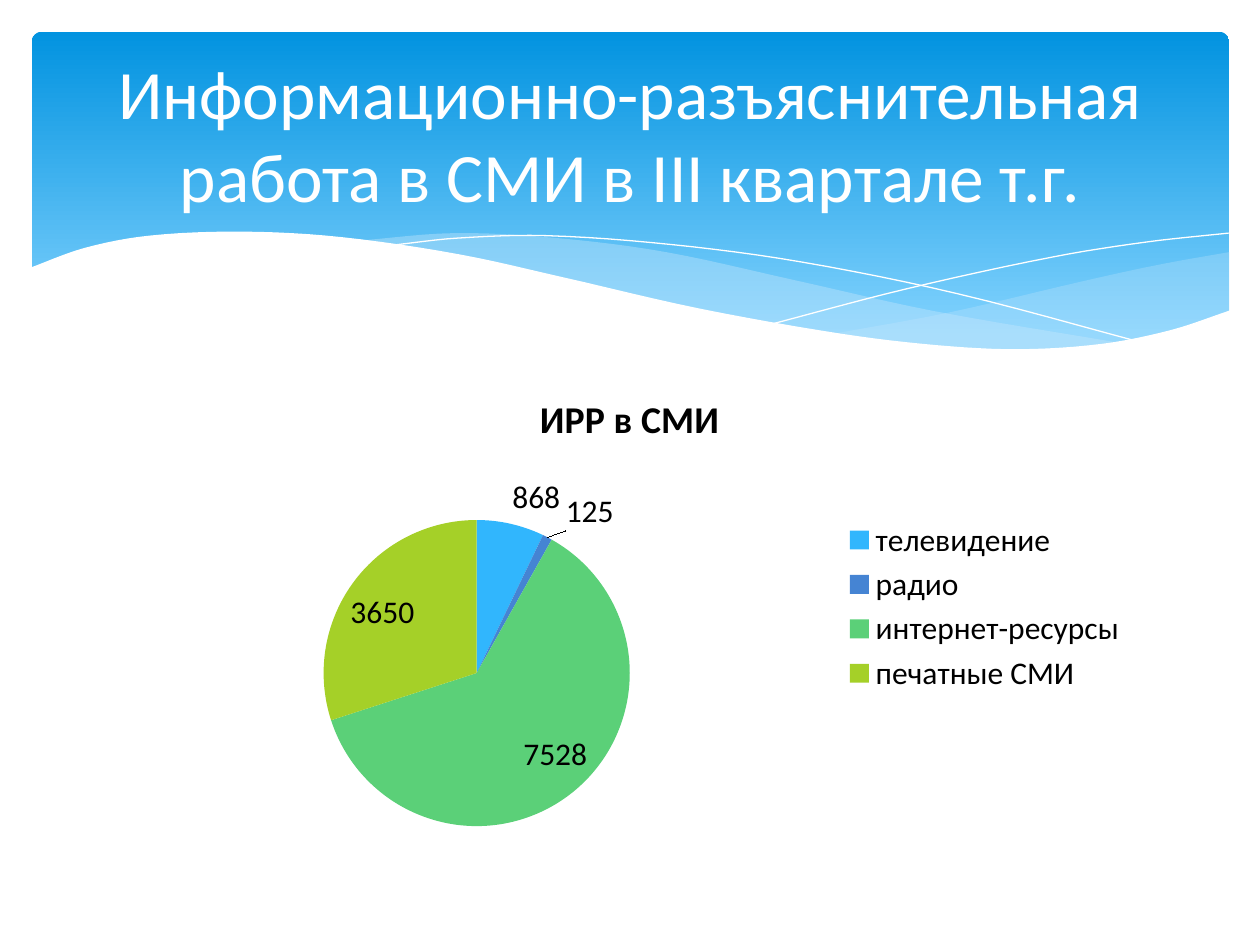
import dataclasses
import itertools

import lxml.etree
import pptx
import pptx.chart.data
import pptx.dml.color
import pptx.enum.chart
import pptx.enum.shapes
import pptx.enum.text
import pptx.oxml
import pptx.oxml.ns
import pptx.util

Cm = pptx.util.Cm
Pt = pptx.util.Pt
qn = pptx.oxml.ns.qn


@dataclasses.dataclass(frozen=True)
class Theme:
    font: str = "Calibri"
    white: str = "FFFFFF"
    black: str = "000000"
    sky_top: str = "0293E0"
    sky_bottom: str = "83D3FE"
    wave: str = "C6E7FC"
    slices: tuple = ("31B6FD", "4584D3", "5BD078", "A5D028")
    title_size: float = 39.6
    chart_title_size: float = 21.6
    chart_size: float = 18


THEME = Theme()

RIGHT_WAVE_TOP = [(16.79, 6.73), (19.13, 6.3), (21.87, 5.66), (23.39, 5.33), (24.79, 5.08)]
RIGHT_WAVE_BOTTOM = [(24.79, 6.27), (23.75, 6.65), (22.58, 6.91), (20.68, 7.06),
                     (18.92, 6.99), (16.79, 6.73)]
LEFT_WAVE_TOP = [(7.26, 4.85), (9.17, 4.7), (11.23, 4.8), (13.41, 5.08),
                 (15.98, 5.64), (18.82, 6.27), (22.68, 6.93)]
LEFT_WAVE_BOTTOM = [(22.68, 6.93), (20.5, 7.06), (18.69, 6.99), (16.51, 6.71),
                    (14.38, 6.3), (11.4, 5.64), (9.19, 5.16), (7.26, 4.85)]
FALLING_LINE = [(7.85, 4.95), (9.22, 4.8), (11, 4.75), (13.54, 4.93),
                (16.15, 5.28), (19.3, 5.92), (23.04, 6.91)]
RISING_LINE = [(15.57, 6.53), (18.29, 5.82), (21.23, 5.18), (23.11, 4.88), (24.77, 4.7)]
WHITE_EDGE = [(0.58, 5.41), (1.7, 5), (3.02, 4.75), (4.9, 4.67), (6.88, 4.78),
              (9.27, 5.13), (11.35, 5.59), (14.1, 6.22), (16.97, 6.73), (18.9, 6.96),
              (20.55, 7.04), (22.23, 6.93), (23.62, 6.65), (24.82, 6.25)]
WHITE_CORNERS = [(24.82, 8.36), (0.58, 8.36)]


def color(code):
    return pptx.dml.color.RGBColor.from_string(code)


def smooth_curve(anchors, steps=6):
    slopes = []
    for index in range(len(anchors)):
        before = anchors[max(index - 1, 0)]
        after = anchors[min(index + 1, len(anchors) - 1)]
        slopes.append((after[1] - before[1]) / (after[0] - before[0]))
    points = [anchors[0]]
    ends = zip(itertools.pairwise(anchors), itertools.pairwise(slopes))
    for ((x0, y0), (x1, y1)), (slope0, slope1) in ends:
        width = x1 - x0
        for step in range(1, steps + 1):
            t = step / steps
            y = (y0 * (1 + 2 * t) * (1 - t) ** 2 + y1 * t * t * (3 - 2 * t)
                 + width * (slope0 * t * (1 - t) ** 2 - slope1 * t * t * (1 - t)))
            points.append((x0 + width * t, y))
    return points


def draw_outline(page, points, closed):
    places = [(Cm(x), Cm(y)) for x, y in points]
    builder = page.shapes.build_freeform(*places[0])
    builder.add_line_segments(places[1:], close=closed)
    shape = builder.convert_to_shape()
    shape.shadow.inherit = False
    return shape


def add_wave(page, points, code, opacity=100):
    shape = draw_outline(page, points, True)
    shape.fill.solid()
    shape.fill.fore_color.rgb = color(code)
    shape.line.fill.background()
    if opacity < 100:
        fill_color = shape.fill._xPr.find(qn("a:solidFill"))[0]
        lxml.etree.SubElement(fill_color, qn("a:alpha")).set("val", str(opacity * 1000))


def add_wave_line(page, anchors):
    shape = draw_outline(page, smooth_curve(anchors), False)
    shape.fill.background()
    shape.line.color.rgb = color(THEME.white)
    shape.line.width = Pt(0)


def add_sky(page):
    sky = page.shapes.add_shape(pptx.enum.shapes.MSO_SHAPE.ROUNDED_RECTANGLE,
                                Cm(0.64), Cm(0.64), Cm(24.14), Cm(6.86))
    sky.adjustments[0] = 0.03
    sky.shadow.inherit = False
    sky.line.fill.background()
    sky.fill.gradient()
    sky.fill.gradient_angle = 270
    stops = zip(sky.fill.gradient_stops, (THEME.sky_top, THEME.sky_bottom), (0, 0.9))
    for stop, code, position in stops:
        stop.color.rgb = color(code)
        stop.position = position


def format_font(font, size, code, bold=False):
    font.name = THEME.font
    font.size = Pt(size)
    font.bold = bold
    font.color.rgb = color(code)


def place_plot(chart, **fractions):
    plot_area = chart._chartSpace.chart.plotArea
    for old in plot_area.findall(qn("c:layout")):
        plot_area.remove(old)
    layout = lxml.etree.Element(qn("c:layout"))
    manual = lxml.etree.SubElement(layout, qn("c:manualLayout"))
    settings = {"layoutTarget": "inner", "xMode": "edge", "yMode": "edge", **fractions}
    for name, value in settings.items():
        lxml.etree.SubElement(manual, qn("c:" + name)).set("val", str(value))
    plot_area.insert(0, layout)


def add_media_chart(page):
    data = pptx.chart.data.CategoryChartData()
    data.categories = ["телевидение", "радио", "интернет-ресурсы", "печатные СМИ"]
    data.add_series("ИРР в СМИ", (868, 125, 7528, 3650))
    chart = page.shapes.add_chart(pptx.enum.chart.XL_CHART_TYPE.PIE,
                                  Cm(2.41), Cm(7.44), Cm(20.57), Cm(9.58), data).chart
    format_font(chart.font, THEME.chart_size, THEME.black)

    chart.has_title = True
    span = chart.chart_title.text_frame.paragraphs[0].add_run()
    span.text = "ИРР в СМИ"
    format_font(span.font, THEME.chart_title_size, THEME.black, bold=True)
    chart.chart_title.include_in_layout = False

    chart.has_legend = True
    chart.legend.position = pptx.enum.chart.XL_LEGEND_POSITION.RIGHT
    chart.legend.include_in_layout = False

    plot = chart.plots[0]
    plot.vary_by_categories = True
    for index, code in enumerate(THEME.slices):
        fill = plot.series[0].points[index].format.fill
        fill.solid()
        fill.fore_color.rgb = color(code)
    plot.has_data_labels = True
    plot.data_labels.show_value = True
    plot.data_labels.show_percentage = False
    plot.data_labels.position = pptx.enum.chart.XL_LABEL_POSITION.BEST_FIT
    place_plot(chart, x=0.2, y=0.31, w=0.3, h=0.66)


def add_title(page):
    title = page.shapes.title
    title.left, title.top, title.width, title.height = Cm(1.27), Cm(0.94), Cm(22.86), Cm(3.48)
    frame = title.text_frame
    frame.word_wrap = True
    frame.auto_size = pptx.enum.text.MSO_AUTO_SIZE.NONE
    frame.vertical_anchor = pptx.enum.text.MSO_ANCHOR.MIDDLE
    para = frame.paragraphs[0]
    para.alignment = pptx.enum.text.PP_ALIGN.CENTER
    span = para.add_run()
    span.text = "Информационно-разъяснительная работа в СМИ в III квартале т.г."
    format_font(span.font, THEME.title_size, THEME.white)
    page.shapes._spTree.append(title._element)


def main():
    deck = pptx.Presentation()
    deck.slide_width, deck.slide_height = Cm(25.4), Cm(19.05)
    page = deck.slides.add_slide(deck.slide_layouts[5])
    add_sky(page)
    add_wave(page, smooth_curve(RIGHT_WAVE_TOP) + smooth_curve(RIGHT_WAVE_BOTTOM), THEME.wave, 29)
    add_wave(page, smooth_curve(LEFT_WAVE_TOP) + smooth_curve(LEFT_WAVE_BOTTOM), THEME.wave, 40)
    add_wave_line(page, FALLING_LINE)
    add_wave_line(page, RISING_LINE)
    add_wave(page, smooth_curve(WHITE_EDGE) + WHITE_CORNERS, THEME.white)
    add_media_chart(page)
    add_title(page)
    deck.save("out.pptx")


if __name__ == "__main__":
    main()
